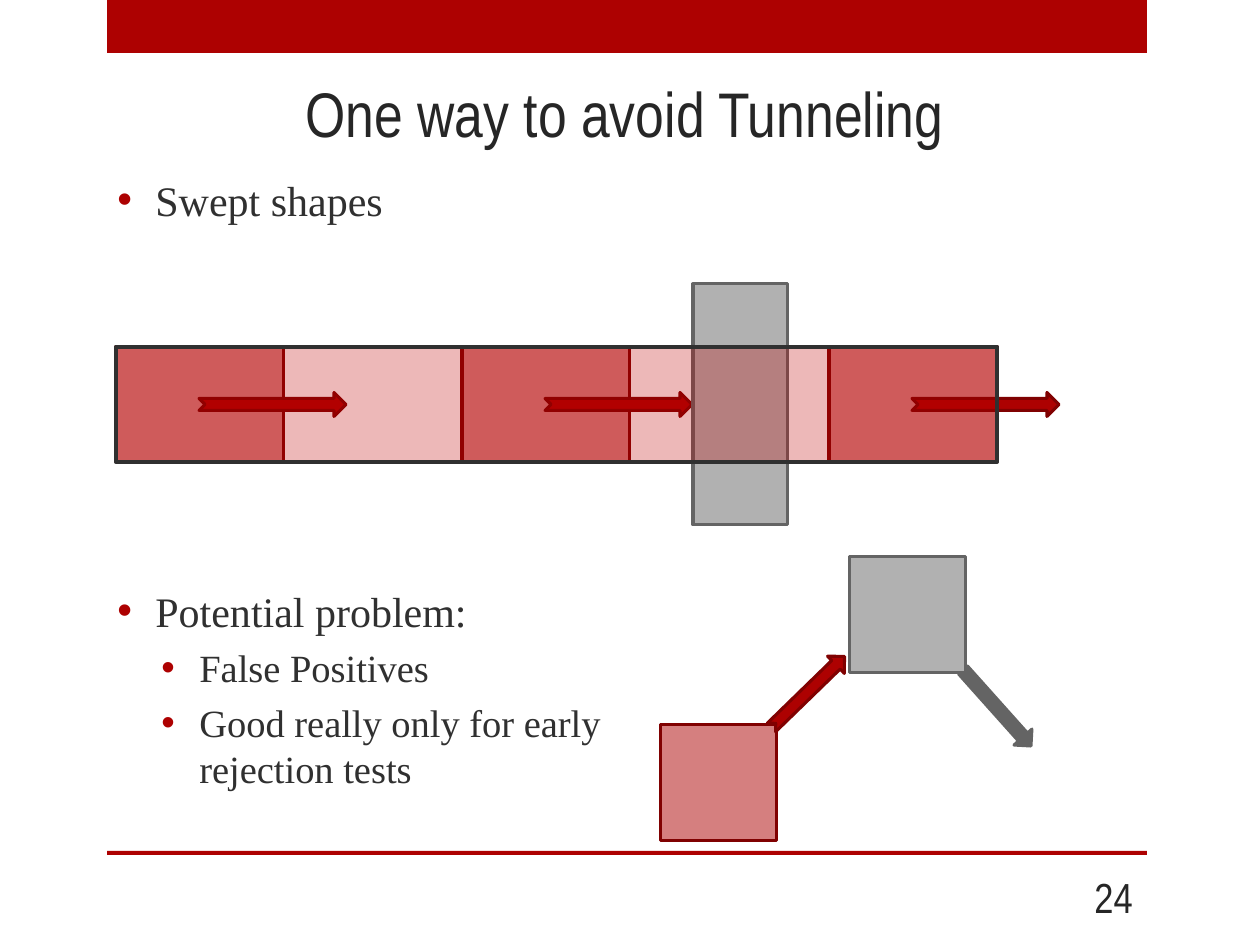
"""Build the slide on avoiding tunneling with swept shapes."""
import pptx
import pptx.dml.color
import pptx.enum.shapes
import pptx.enum.text
import pptx.oxml
import pptx.oxml.ns
import pptx.util

TITLE = "One way to avoid Tunneling"
PAGE_NUMBER = "24"
BULLETS = [
    (168, [(0, "Swept shapes")]),
    (579, [
        (0, "Potential problem:"),
        (1, "False Positives"),
        (1, "Good really only for early rejection tests"),
    ]),
]
MOVER_LEFTS = [116, 462, 829]
MOVER_TOP, MOVER_WIDTH, MOVER_HEIGHT = 347, 168, 115
MOVER_ARROW_OFFSET, MOVER_ARROW_LENGTH = 83, 147
ARROW_THICKNESS = 24
WALL = (693, 284, 95, 241)
COLLIDERS = [
    ("mover", (661, 725), (757, 680), 315.8),
    ("wall", (850, 557), (946, 696), 48.2),
]
COLLIDER_SIDE, COLLIDER_ARROW_LENGTH = 116, 102

THEME = {
    "accent": "AD0101",
    "title": "262626",
    "text": "303030",
    "heading_font": "Arial Narrow",
    "body_font": "Times New Roman",
    "title_size": 36,
    "number_size": 24,
    "body_sizes": [24, 22],
    "space_before": [5.5, 5],
    "line": 1.75,
    "mover": ("AD0101", "800101"),
    "wall": ("646464", "646464"),
    "sweep": ("C00000", "303030"),
    "sweep_line": 2.5,
}
INDENTS = [38, 82]
HANGING = 38

SHAPES = pptx.enum.shapes.MSO_SHAPE
ALIGN = pptx.enum.text.PP_ALIGN
ANCHOR = pptx.enum.text.MSO_ANCHOR


def px(length):
    return pptx.util.Emu(round(length * 914400 / 126))


def color(value):
    return pptx.dml.color.RGBColor.from_string(value)


def add_drawing(slide, kind, box, fill, line=None, width=THEME["line"], alpha=None, rotation=0):
    drawing = slide.shapes.add_shape(kind, *map(px, box))
    drawing.shadow.inherit = False
    drawing.rotation = rotation
    drawing.fill.solid()
    drawing.fill.fore_color.rgb = color(fill)
    if alpha is not None:
        fill_color = drawing._element.spPr.find(pptx.oxml.ns.qn("a:solidFill"))[0]
        fill_color.append(pptx.oxml.parse_xml(
            f'<a:alpha {pptx.oxml.ns.nsdecls("a")} val="{alpha * 1000}"/>'))
    if line:
        drawing.line.color.rgb = color(line)
        drawing.line.width = pptx.util.Pt(width)
    else:
        drawing.line.fill.background()


def add_arrow(slide, left, top, length, role, rotation=0):
    add_drawing(slide, SHAPES.NOTCHED_RIGHT_ARROW, (left, top, length, ARROW_THICKNESS),
                *THEME[role], rotation=rotation)


def style(paragraph, font, size, ink):
    paragraph.font.name = font
    paragraph.font.size = pptx.util.Pt(size)
    paragraph.font.color.rgb = color(ink)


def add_bullets(slide, top, items):
    height = 60 if len(items) == 1 else 851 - top
    frame = slide.shapes.add_textbox(*map(px, (105, top, 588, height))).text_frame
    frame.word_wrap = True
    for index, (level, text) in enumerate(items):
        paragraph = frame.paragraphs[0] if index == 0 else frame.add_paragraph()
        paragraph.text = text
        paragraph.level = level
        paragraph.space_before = pptx.util.Pt(THEME["space_before"][level])
        properties = paragraph._p.get_or_add_pPr()
        properties.set("marL", str(px(INDENTS[level])))
        properties.set("indent", str(-px(HANGING)))
        namespace = pptx.oxml.ns.nsdecls("a")
        for bullet in (
            f'<a:buClr {namespace}><a:srgbClr val="{THEME["accent"]}"/></a:buClr>',
            f'<a:buFont {namespace} typeface="Arial"/>',
            f'<a:buChar {namespace} char="•"/>',
        ):
            properties.append(pptx.oxml.parse_xml(bullet))
        style(paragraph, THEME["body_font"], THEME["body_sizes"][level], THEME["text"])


def main():
    deck = pptx.Presentation()
    deck.slide_width, deck.slide_height = px(1260), px(945)
    slide = deck.slides.add_slide(deck.slide_layouts[5])

    for top, height in [(0, 53), (851, 4)]:
        add_drawing(slide, SHAPES.RECTANGLE, (107, top, 1040, height), THEME["accent"])

    title = slide.shapes.title
    title.left, title.top, title.width, title.height = map(px, (105, 67, 1039, 91))
    title.text_frame.text = TITLE
    title.text_frame.vertical_anchor = ANCHOR.MIDDLE
    heading = title.text_frame.paragraphs[0]
    heading.alignment = ALIGN.CENTER
    style(heading, THEME["heading_font"], THEME["title_size"], THEME["title"])

    for top, items in BULLETS:
        add_bullets(slide, top, items)

    number = slide.shapes.add_textbox(*map(px, (1040, 872, 105, 50))).text_frame
    number.word_wrap = True
    number.text = PAGE_NUMBER
    number.vertical_anchor = ANCHOR.MIDDLE
    number.paragraphs[0].alignment = ALIGN.RIGHT
    style(number.paragraphs[0], THEME["heading_font"], THEME["number_size"], THEME["title"])

    arrow_top = MOVER_TOP + (MOVER_HEIGHT - ARROW_THICKNESS) / 2
    for left in MOVER_LEFTS:
        add_drawing(slide, SHAPES.RECTANGLE, (left, MOVER_TOP, MOVER_WIDTH, MOVER_HEIGHT),
                    *THEME["mover"], alpha=50)
        add_arrow(slide, left + MOVER_ARROW_OFFSET, arrow_top, MOVER_ARROW_LENGTH, "mover")

    add_drawing(slide, SHAPES.RECTANGLE, WALL, *THEME["wall"], alpha=50)
    sweep_width = MOVER_LEFTS[-1] + MOVER_WIDTH - MOVER_LEFTS[0]
    add_drawing(slide, SHAPES.RECTANGLE, (MOVER_LEFTS[0], MOVER_TOP, sweep_width, MOVER_HEIGHT),
                *THEME["sweep"], width=THEME["sweep_line"], alpha=28)

    for role, corner, arrow, rotation in COLLIDERS:
        add_drawing(slide, SHAPES.RECTANGLE, (*corner, COLLIDER_SIDE, COLLIDER_SIDE),
                    *THEME[role], alpha=50)
        add_arrow(slide, *arrow, COLLIDER_ARROW_LENGTH, role, rotation)

    deck.save("out.pptx")


if __name__ == "__main__":
    main()
